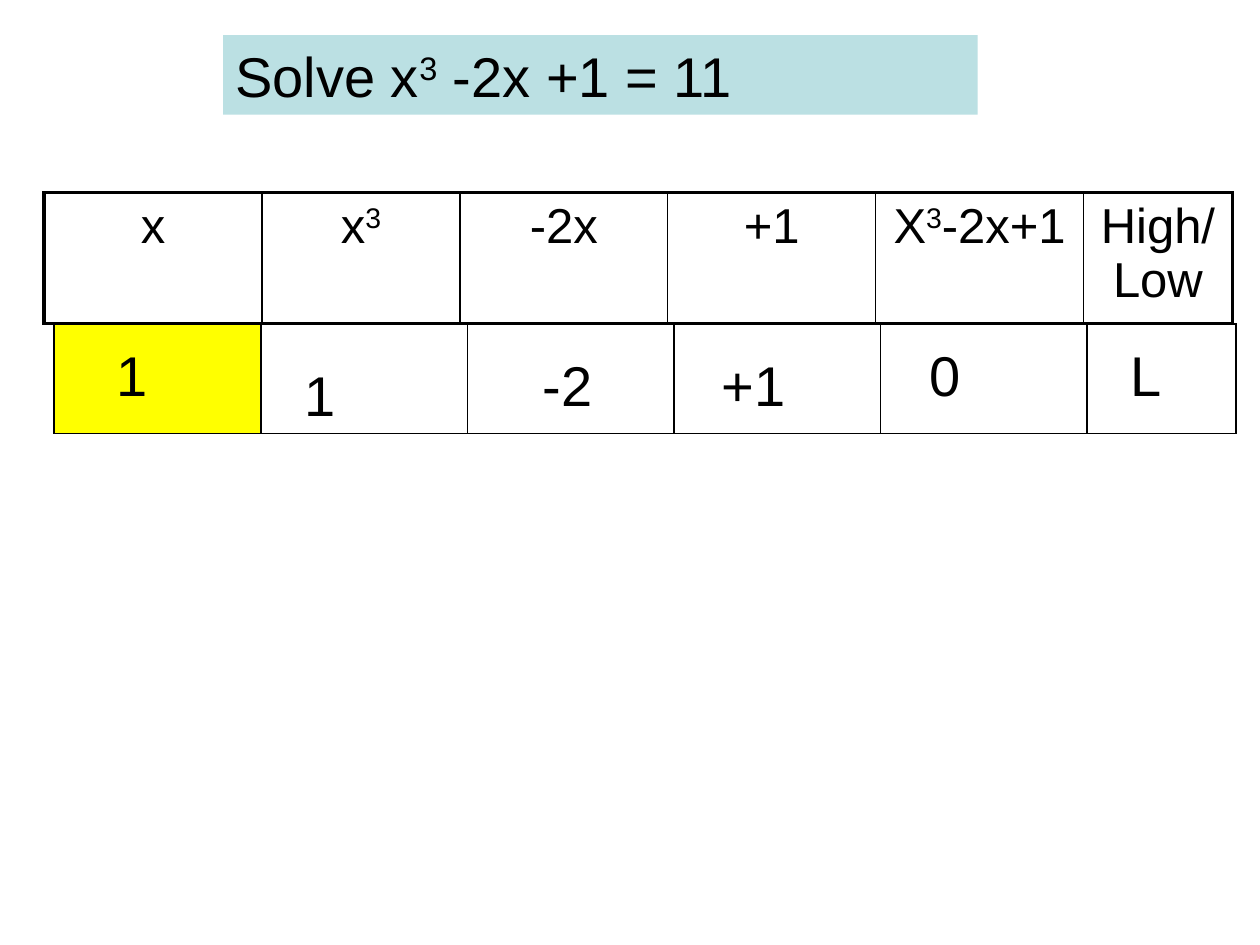
from lxml import etree
from pptx import Presentation
from pptx.dml.color import RGBColor
from pptx.enum.shapes import MSO_SHAPE
from pptx.enum.text import MSO_ANCHOR, MSO_AUTO_SIZE, PP_ALIGN
from pptx.oxml.ns import qn
from pptx.util import Inches, Pt

RECT = MSO_SHAPE.RECTANGLE
TOP = MSO_ANCHOR.TOP
GROW = MSO_AUTO_SIZE.SHAPE_TO_FIT_TEXT
LEFT, CENTER = PP_ALIGN.LEFT, PP_ALIGN.CENTER
BLACK = RGBColor(0x00, 0x00, 0x00)
AQUA = RGBColor(0xBB, 0xE0, 0xE3)
YELLOW = RGBColor(0xFF, 0xFF, 0x00)
THIN, THICK = 1, 2.25

TITLE = ["Solve x", "3", " -2x +1 = 11"]
HEADS = [["x"], ["x", "3"], ["-2x"], ["+1"], ["X", "3", "-2x+1"], ["High/Low"]]
HEAD_COLS = [1.73, 1.57, 1.65, 1.65, 1.65, 1.18]
TRY_COLS = [1.64] * 5 + [1.18]
TRIES = [
    ("1", 0.83, 2.65, 0.1),
    ("1", 2.32, 2.81, 0.1),
    ("-2", 4.21, 2.73, 0.1),
    ("+1", 5.63, 2.73, 0.1),
    ("0", 7.28, 2.65, 0.1),
    ("L", 8.62, 2.65, 0.35),
]


def write(frame, parts, size, align=LEFT):
    para = frame.paragraphs[0]
    para.alignment = align
    look = {"name": "Arial", "size": Pt(size)}
    for i, part in enumerate(parts):
        run = para.add_run()
        run.text = part
        for key, value in look.items():
            setattr(run.font, key, value)
        run.font.color.rgb = BLACK
        if i == 1:
            run.font._element.set("baseline", "30000")


def fit(frame, inset=0.1):
    form = {"word_wrap": True, "auto_size": GROW, "vertical_anchor": TOP,
            "margin_left": Inches(inset)}
    for key, value in form.items():
        setattr(frame, key, value)


def edge(cell, widths):
    props = cell._tc.get_or_add_tcPr()
    for side, width in zip("LRTB", widths):
        line = etree.SubElement(props, qn(f"a:ln{side}"), w=str(Pt(width)))
        fill = etree.SubElement(line, qn("a:solidFill"))
        etree.SubElement(fill, qn("a:srgbClr"), val=str(BLACK))


def grid(slide, left, top, cols, high, rim):
    frame = slide.shapes.add_table(1, len(cols), Inches(left), Inches(top),
                                   Inches(sum(cols)), Inches(high))
    table = frame.table
    table.first_row = table.horz_banding = False
    last = len(cols) - 1
    for i, wide in enumerate(cols):
        table.columns[i].width = Inches(wide)
        cell = table.cell(0, i)
        edge(cell, (rim if i == 0 else THIN, rim if i == last else THIN, rim, rim))
        cell.fill.background()
    return table


def main():
    deck = Presentation()
    deck.slide_width, deck.slide_height = Inches(10), Inches(7.5)
    slide = deck.slides.add_slide(deck.slide_layouts[6])

    bar = slide.shapes.add_shape(RECT, Inches(1.77), Inches(0.28),
                                 Inches(5.99), Inches(0.63))
    bar.shadow.inherit = False
    bar.fill.solid()
    bar.fill.fore_color.rgb = AQUA
    bar.line.fill.background()
    fit(bar.text_frame)
    write(bar.text_frame, TITLE, 32)

    head = grid(slide, 0.35, 1.53, HEAD_COLS, 1.04, THICK)
    for i, parts in enumerate(HEADS):
        write(head.cell(0, i).text_frame, parts, 28, CENTER)

    body = grid(slide, 0.43, 2.57, TRY_COLS, 0.87, THIN)
    first = body.cell(0, 0)
    first.fill.solid()
    first.fill.fore_color.rgb = YELLOW

    for text, left, top, inset in TRIES:
        box = slide.shapes.add_textbox(Inches(left), Inches(top),
                                       Inches(1.1), Inches(0.63))
        fit(box.text_frame, inset)
        write(box.text_frame, [text], 32)

    deck.save("out.pptx")


if __name__ == "__main__":
    main()
